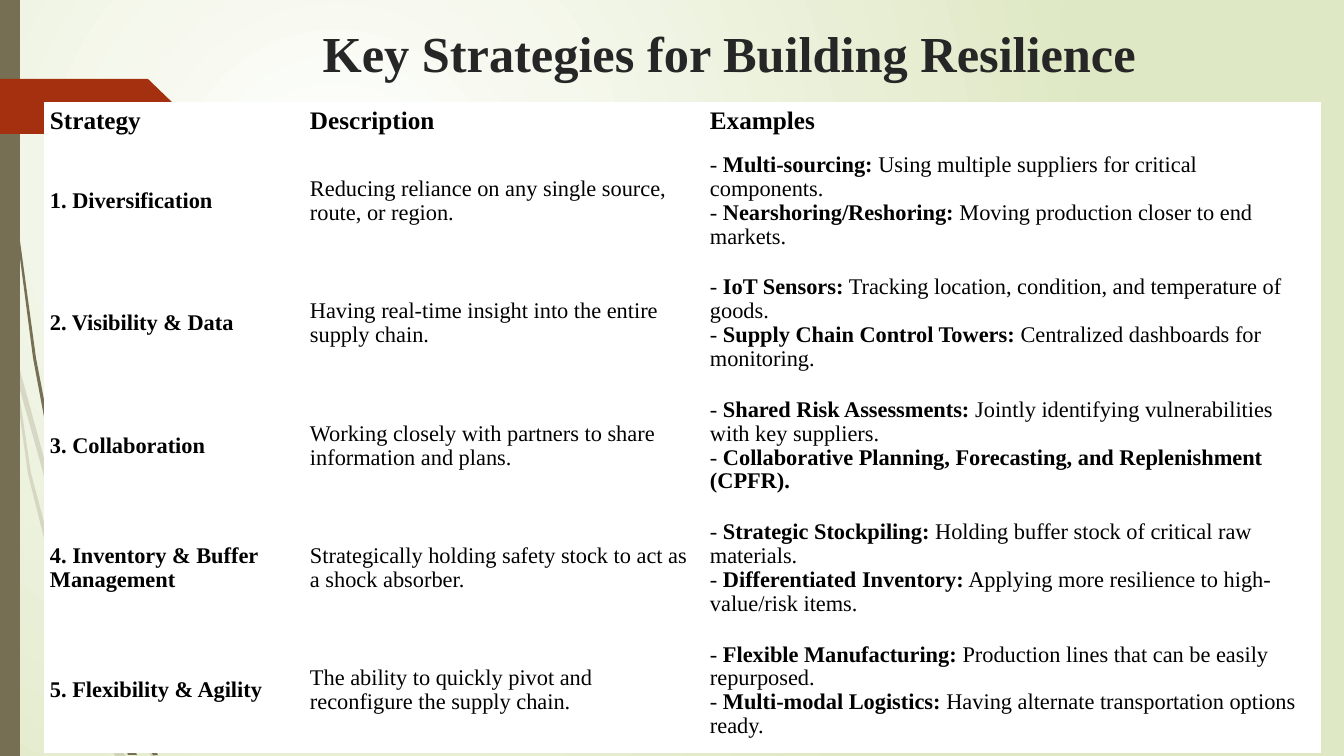
from lxml.etree import SubElement
from pptx import Presentation
from pptx.dml.color import RGBColor
from pptx.enum.text import MSO_ANCHOR as Anchor, PP_ALIGN as Align
from pptx.oxml.ns import qn
from pptx.util import Pt

SCALE = 914400 / 100.8
COLORS = {"white": "FFFFFF", "mist": "DFE8C4", "olive": "766F54",
          "rust": "A53010", "title": "262626", "black": "000000"}
SERIF = "Times New Roman"

LIGHT_WISPS = [
    [(14, 348), (62, 524), (86, 591), (85, 604), (58, 526), (17, 379)],
    [(11, 353), (17, 379), (31, 473), (71, 624), (94, 688), (102, 720),
     (93, 699), (66, 626), (28, 474)],
    [(89, 601), (93, 612), (128, 698), (156, 756), (151, 756), (124, 700), (89, 615)],
    [(94, 688), (106, 717), (125, 756), (115, 756), (102, 720)],
]
DARK_WISPS = [
    [(3, 0), (4, 0), (5, 48), (8, 110), (19, 234), (36, 358), (55, 457), (57, 485),
     (56, 481), (33, 358), (17, 235), (7, 111), (4, 48)],
    [(111, 646), (114, 654), (137, 712), (158, 755), (153, 755), (133, 714), (112, 661)],
    [(111, 697), (123, 725), (137, 755), (128, 755), (118, 728)],
]
RIBBON = [(0, 79), (148, 79), (175, 105), (175, 109), (149, 134), (0, 134)]

HEADINGS = ["Strategy", "Description", "Examples"]
STRATEGIES = [
    ("1. Diversification",
     "Reducing reliance on any single source, route, or region.",
     [("Multi-sourcing:", " Using multiple suppliers for critical components."),
      ("Nearshoring/Reshoring:", " Moving production closer to end markets.")]),
    ("2. Visibility & Data",
     "Having real-time insight into the entire supply chain.",
     [("IoT Sensors:", " Tracking location, condition, and temperature of goods."),
      ("Supply Chain Control Towers:", " Centralized dashboards for monitoring.")]),
    ("3. Collaboration",
     "Working closely with partners to share information and plans.",
     [("Shared Risk Assessments:",
       " Jointly identifying vulnerabilities with key suppliers."),
      ("Collaborative Planning, Forecasting, and Replenishment (CPFR).", "")]),
    ("4. Inventory & Buffer Management",
     "Strategically holding safety stock to act as a shock absorber.",
     [("Strategic Stockpiling:", " Holding buffer stock of critical raw materials."),
      ("Differentiated Inventory:",
       " Applying more resilience to high-value/risk items.")]),
    ("5. Flexibility & Agility",
     "The ability to quickly pivot and reconfigure the supply chain.",
     [("Flexible Manufacturing:", " Production lines that can be easily repurposed."),
      ("Multi-modal Logistics:", " Having alternate transportation options ready.")]),
]


def px(length):
    """Turn pixels into EMU."""
    return round(length * SCALE)


def rgb(color):
    """Look up a colour by its name."""
    return RGBColor.from_string(COLORS[color])


def add_text(paragraph, text, size=16, bold=False, color="black", font=SERIF):
    """Append a formatted run to a paragraph."""
    run = paragraph.add_run()
    run.text = text
    run.font.size = Pt(size)
    run.font.bold = bold
    run.font.name = font
    run.font.color.rgb = rgb(color)


def paint_background(slide):
    """Fill the background with a radial gradient."""
    fill = slide.background.fill
    fill.gradient()
    for stop, color in zip(fill.gradient_stops, ("white", "mist")):
        stop.color.rgb = rgb(color)
    gradient = slide.background._cSld.find(".//" + qn("a:gradFill"))
    gradient.remove(gradient.find(qn("a:lin")))
    circle = SubElement(gradient, qn("a:path"), path="circle")
    SubElement(circle, qn("a:fillToRect"), l="50000", t="50000", r="100000", b="100000")


def paint(shape, color, opacity=100):
    """Give a shape a plain fill with no line or shadow."""
    shape.shadow.inherit = False
    shape.line.fill.background()
    shape.fill.solid()
    shape.fill.fore_color.rgb = rgb(color)
    if opacity < 100:
        tint = shape.fill._xPr.find(".//" + qn("a:srgbClr"))
        SubElement(tint, qn("a:alpha"), val=str(opacity * 1000))


def add_outline(slide, points, color, opacity=100):
    """Draw a closed filled outline through the points."""
    start, *others = points
    builder = slide.shapes.build_freeform(*start, scale=SCALE)
    builder.add_line_segments(others)
    paint(builder.convert_to_shape(), color, opacity)


def add_title(slide):
    """Place the centred slide title."""
    frame = slide.shapes.add_textbox(px(178), px(17), px(1089), px(105)).text_frame
    frame.word_wrap = True
    paragraph = frame.paragraphs[0]
    paragraph.alignment = Align.CENTER
    add_text(paragraph, " ", size=36, color="title", font="TeX Gyre Adventor")
    add_text(paragraph, "Key Strategies for Building Resilience",
             size=36, bold=True, color="title")


def prepare_cell(cell, left):
    """Set up a white cell and return its paragraph."""
    cell.fill.solid()
    cell.fill.fore_color.rgb = rgb("white")
    cell.vertical_anchor = Anchor.MIDDLE
    cell.margin_left, cell.margin_right = px(left), px(6)
    cell.margin_top = cell.margin_bottom = px(4)
    paragraph = cell.text_frame.paragraphs[0]
    paragraph.line_spacing = 0.96
    return paragraph


def add_examples(paragraph, examples):
    """Write dashed examples with bold lead words on separate lines."""
    for index, (lead, detail) in enumerate(examples):
        if index:
            paragraph.add_line_break()
        add_text(paragraph, "- ")
        add_text(paragraph, lead, bold=True)
        if detail:
            add_text(paragraph, detail)


def add_strategy_table(slide):
    """Build the table of strategies, descriptions and examples."""
    widths, header_height, body_height = (259, 400, 616), 36, 612
    count = len(STRATEGIES)
    table = slide.shapes.add_table(count + 1, len(widths), px(45), px(103),
                                   px(sum(widths)), px(header_height + body_height)).table
    table.first_row = table.horz_banding = False
    for column, width in zip(table.columns, widths):
        column.width = px(width)
    for row in table.rows:
        row.height = px(body_height / count)
    table.rows[0].height = px(header_height)

    for row, contents in zip(table.rows, [HEADINGS, *STRATEGIES]):
        paragraphs = [prepare_cell(cell, left) for cell, left in zip(row.cells, (5, 6, 6))]
        if contents is HEADINGS:
            for paragraph, heading in zip(paragraphs, HEADINGS):
                add_text(paragraph, heading, size=18, bold=True)
        else:
            strategy, description, examples = contents
            add_text(paragraphs[0], strategy, bold=True)
            add_text(paragraphs[1], description)
            add_examples(paragraphs[2], examples)


def main():
    """Build the slide and save it."""
    deck = Presentation()
    deck.slide_width, deck.slide_height = px(1344), px(756)
    slide = deck.slides.add_slide(deck.slide_layouts[6])
    paint_background(slide)
    for wisp in LIGHT_WISPS:
        add_outline(slide, wisp, "olive", opacity=20)
    for wisp in DARK_WISPS:
        add_outline(slide, wisp, "olive")
    add_outline(slide, [(0, 0), (20, 0), (20, 756), (0, 756)], "olive")
    add_outline(slide, RIBBON, "rust")
    add_title(slide)
    add_strategy_table(slide)
    deck.save("out.pptx")


if __name__ == "__main__":
    main()
